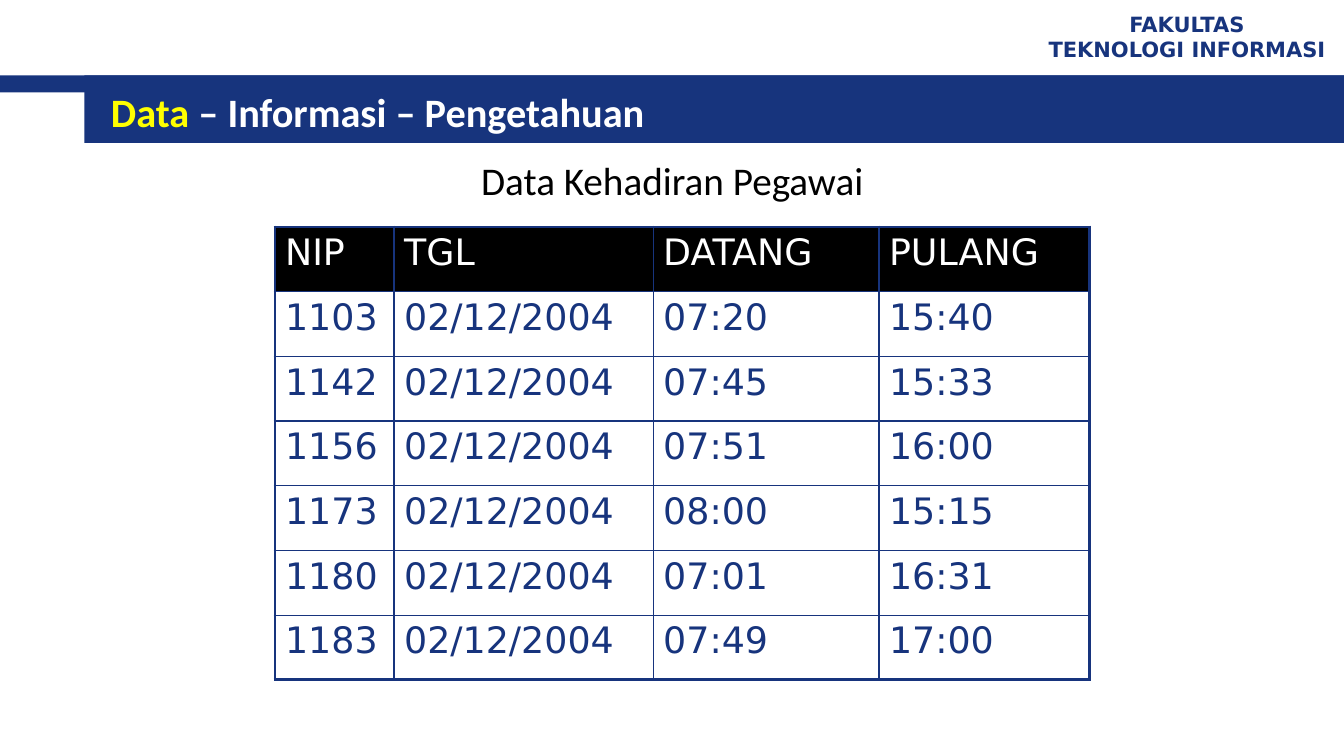
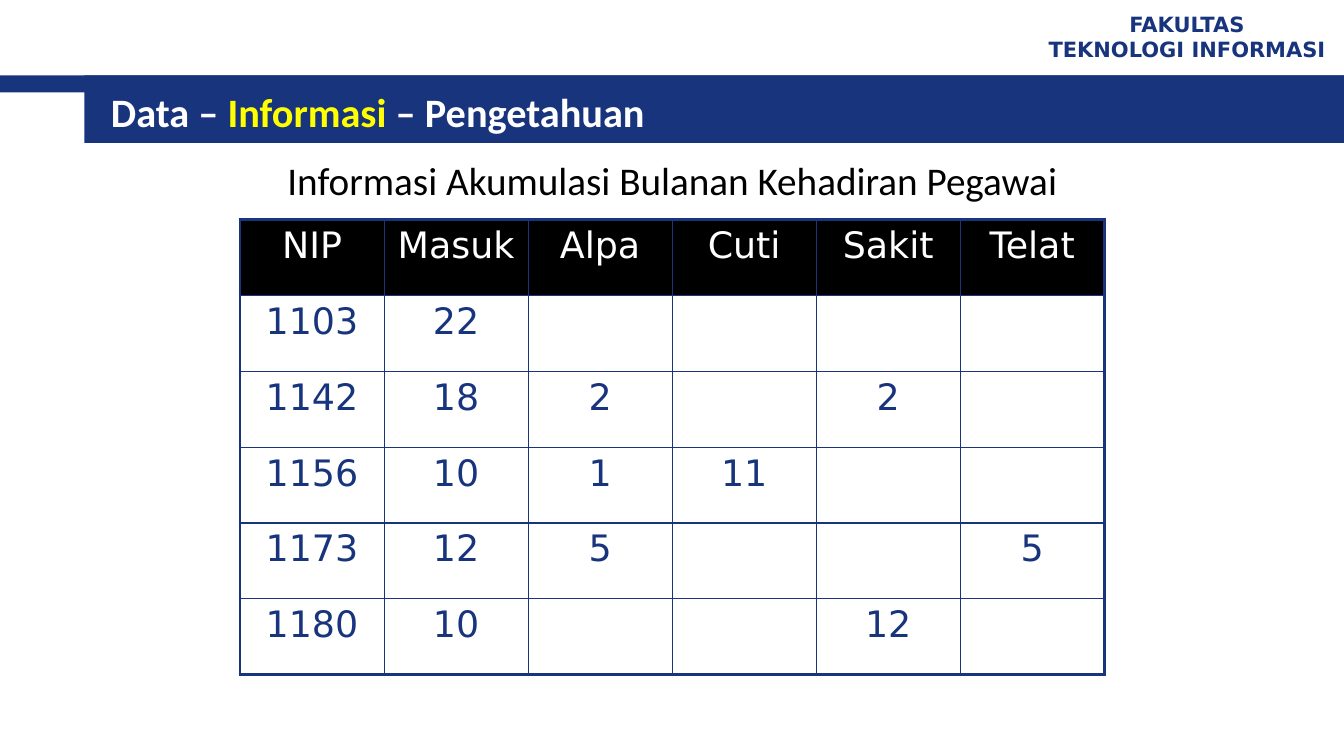
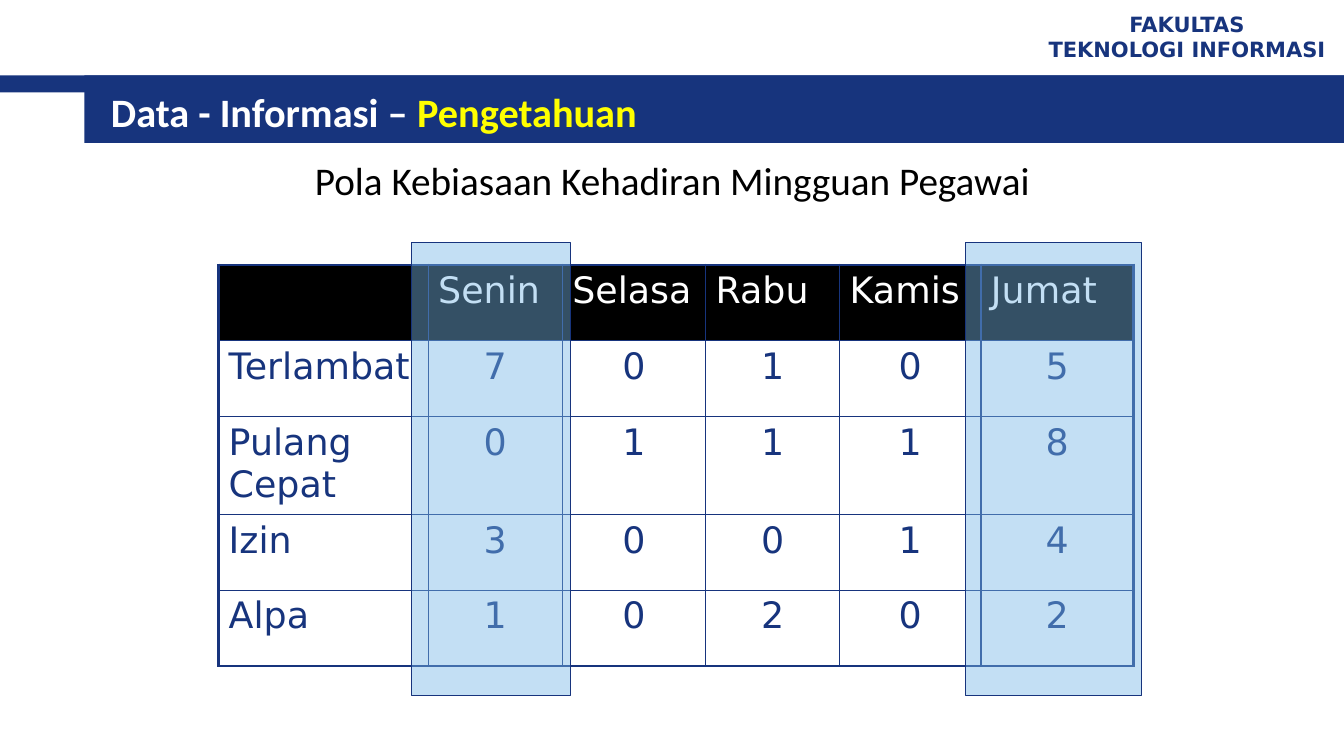
import dataclasses

import lxml.etree
import pptx
import pptx.dml.color
import pptx.enum.shapes
import pptx.enum.text
import pptx.oxml.ns
import pptx.util

Cm = pptx.util.Cm
Pt = pptx.util.Pt
qn = pptx.oxml.ns.qn
ALIGN = pptx.enum.text.PP_ALIGN
MIDDLE = pptx.enum.text.MSO_ANCHOR.MIDDLE
RECTANGLE = pptx.enum.shapes.MSO_SHAPE.RECTANGLE


@dataclasses.dataclass(frozen=True)
class Theme:
    navy: str = "17347D"
    yellow: str = "FFFF00"
    white: str = "FFFFFF"
    black: str = "000000"
    sky: str = "77B7E7"
    sky_alpha: int = 44000
    text_font: str = "Calibri"
    table_font: str = "DejaVu Sans"
    title_size: float = 28.8
    subtitle_size: float = 28
    table_size: float = 26
    faculty_size: float = 15
    outer_border: float = 2.25
    inner_border: float = 1
    highlight_border: float = 0.75


THEME = Theme()


def add_run(paragraph, text, font, size, colour, bold=False):
    run = paragraph.add_run()
    run.text = text
    run.font.name = font
    run.font.size = Pt(size)
    run.font.bold = bold
    run.font.color.rgb = pptx.dml.color.RGBColor.from_string(colour)


def add_box(slide, box, colour):
    """Add a filled rectangle without outline; box is left, top, width, height in cm."""
    shape = slide.shapes.add_shape(RECTANGLE, *map(Cm, box))
    shape.shadow.inherit = False
    shape.fill.solid()
    shape.fill.fore_color.rgb = pptx.dml.color.RGBColor.from_string(colour)
    shape.line.fill.background()
    return shape


# Content: title parts, the part in focus, subtitle and table of each slide
LEFT, CENTER = ALIGN.LEFT, ALIGN.CENTER
lessons = [
    {
        "title": ["Data ", "– Informasi – Pengetahuan"],
        "focus": "Data ",
        "subtitle": "Data Kehadiran Pegawai",
        "corner": (6.93, 5.72),
        "columns": [3, 6.53, 5.69, 5.31],
        "row_heights": [1.63] * 7,
        "header_align": LEFT,
        "label_align": LEFT,
        "value_align": LEFT,
        "rows": [
            ["NIP", "TGL", "DATANG", "PULANG"],
            ["1103", "02/12/2004", "07:20", "15:40"],
            ["1142", "02/12/2004", "07:45", "15:33"],
            ["1156", "02/12/2004", "07:51", "16:00"],
            ["1173", "02/12/2004", "08:00", "15:15"],
            ["1180", "02/12/2004", "07:01", "16:31"],
            ["1183", "02/12/2004", "07:49", "17:00"],
        ],
        "highlights": [],
    },
    {
        "title": ["Data – ", "Informasi ", "– Pengetahuan"],
        "focus": "Informasi ",
        "subtitle": "Informasi Akumulasi Bulanan Kehadiran Pegawai",
        "corner": (6.05, 5.54),
        "columns": [3.63] * 6,
        "row_heights": [1.91] * 6,
        "header_align": CENTER,
        "label_align": CENTER,
        "value_align": CENTER,
        "rows": [
            ["NIP", "Masuk", "Alpa", "Cuti", "Sakit", "Telat"],
            ["1103", "22", "", "", "", ""],
            ["1142", "18", "2", "", "2", ""],
            ["1156", "10", "1", "11", "", ""],
            ["1173", "12", "5", "", "", "5"],
            ["1180", "10", "", "", "12", ""],
        ],
        "highlights": [],
    },
    {
        "title": ["Data - Informasi – ", "Pengetahuan"],
        "focus": "Pengetahuan",
        "subtitle": "Pola Kebiasaan Kehadiran Mingguan Pegawai",
        "corner": (5.51, 6.68),
        "columns": [5.28, 3.38, 3.61, 3.38, 3.56, 3.84],
        "row_heights": [1.91, 1.91, 2.46, 1.91, 1.91],
        "header_align": LEFT,
        "label_align": LEFT,
        "value_align": CENTER,
        "rows": [
            ["", "Senin", "Selasa", "Rabu", "Kamis", "Jumat"],
            ["Terlambat", "7", "0", "1", "0", "5"],
            ["Pulang Cepat", "0", "1", "1", "1", "8"],
            ["Izin", "3", "0", "0", "1", "4"],
            ["Alpa", "1", "0", "2", "0", "2"],
        ],
        "highlights": [(10.36, 6.12, 4.01, 11.4), (24.33, 6.12, 4.45, 11.4)],
    },
]

deck = pptx.Presentation()
deck.slide_width, deck.slide_height = Cm(33.87), Cm(19.05)
layout = deck.slide_layouts[1]

# Shared layout: placeholder places, navy bands and faculty name
placeholder_boxes = {0: (2.54, 2.03, 30.2, 1.57), 1: (1.7, 3.81, 30.48, 13.77)}
for placeholder in list(layout.placeholders):
    box = placeholder_boxes.get(placeholder.placeholder_format.idx)
    if box:
        placeholder.left, placeholder.top, placeholder.width, placeholder.height = map(Cm, box)
    else:
        layout.shapes._spTree.remove(placeholder._element)

slides = [deck.slides.add_slide(layout) for lesson in lessons]

thin_band = add_box(slides[0], (0, 1.9, 33.87, 0.43), THEME.navy)
title_band = add_box(slides[0], (2.13, 1.9, 31.74, 1.7), THEME.navy)
faculty = slides[0].shapes.add_textbox(Cm(25.98), Cm(0.13), Cm(7.87), Cm(1.57))
faculty.text_frame.word_wrap = True
faculty.text_frame.vertical_anchor = MIDDLE
for index, line in enumerate(["FAKULTAS", "TEKNOLOGI INFORMASI"]):
    paragraph = faculty.text_frame.add_paragraph() if index else faculty.text_frame.paragraphs[0]
    paragraph.alignment = CENTER
    add_run(paragraph, line, THEME.table_font, THEME.faculty_size, THEME.navy, bold=True)

# Layouts have no add_shape, so the shared parts are moved behind the placeholders
for position, part in enumerate([thin_band, title_band, faculty], start=2):
    layout.shapes._spTree.insert(position, part._element)

for slide, lesson in zip(slides, lessons):
    title = slide.shapes.title.text_frame
    title.auto_size = pptx.enum.text.MSO_AUTO_SIZE.NONE
    title.vertical_anchor = MIDDLE
    title.paragraphs[0].alignment = LEFT
    for part in lesson["title"]:
        colour = THEME.yellow if part == lesson["focus"] else THEME.white
        add_run(title.paragraphs[0], part, THEME.text_font, THEME.title_size, colour, bold=True)

    body = slide.placeholders[1].text_frame
    body.auto_size = pptx.enum.text.MSO_AUTO_SIZE.NONE
    subtitle = body.paragraphs[0]
    subtitle.alignment = CENTER
    subtitle.space_before = Pt(0)
    properties = subtitle._p.get_or_add_pPr()
    properties.set("marL", "0")
    properties.set("indent", "0")
    lxml.etree.SubElement(properties, qn("a:buNone"))
    add_run(subtitle, lesson["subtitle"], THEME.text_font, THEME.subtitle_size, THEME.black)

    rows, columns, heights = lesson["rows"], lesson["columns"], lesson["row_heights"]
    size = (sum(columns), sum(heights))
    table = slide.shapes.add_table(
        len(rows), len(columns), *map(Cm, lesson["corner"] + size)
    ).table
    table.first_row = table.horz_banding = False
    for column, width in zip(table.columns, columns):
        column.width = Cm(width)
    for row, height in zip(table.rows, heights):
        row.height = Cm(height)

    for r, row in enumerate(rows):
        for c, text in enumerate(row):
            cell = table.cell(r, c)
            outer_edges = {
                "a:lnL": c == 0,
                "a:lnR": c == len(columns) - 1,
                "a:lnT": r == 0,
                "a:lnB": r == len(rows) - 1,
            }
            for edge, is_outer in outer_edges.items():
                width = THEME.outer_border if is_outer else THEME.inner_border
                border = lxml.etree.SubElement(
                    cell._tc.get_or_add_tcPr(), qn(edge), w=str(int(Pt(width)))
                )
                line_fill = lxml.etree.SubElement(border, qn("a:solidFill"))
                lxml.etree.SubElement(line_fill, qn("a:srgbClr"), val=THEME.navy)

            if r == 0:
                cell.fill.solid()
                cell.fill.fore_color.rgb = pptx.dml.color.RGBColor.from_string(THEME.black)
                colour, alignment = THEME.white, lesson["header_align"]
            else:
                cell.fill.background()
                colour = THEME.navy
                alignment = lesson["value_align"] if c else lesson["label_align"]
            if text:
                paragraph = cell.text_frame.paragraphs[0]
                paragraph.alignment = alignment
                add_run(paragraph, text, THEME.table_font, THEME.table_size, colour)

    for box in lesson["highlights"]:
        highlight = add_box(slide, box, THEME.sky)
        highlight.line.color.rgb = pptx.dml.color.RGBColor.from_string(THEME.navy)
        highlight.line.width = Pt(THEME.highlight_border)
        sky = highlight._element.spPr.find(qn("a:solidFill")).find(qn("a:srgbClr"))
        lxml.etree.SubElement(sky, qn("a:alpha"), val=str(THEME.sky_alpha))

deck.save("out.pptx")
